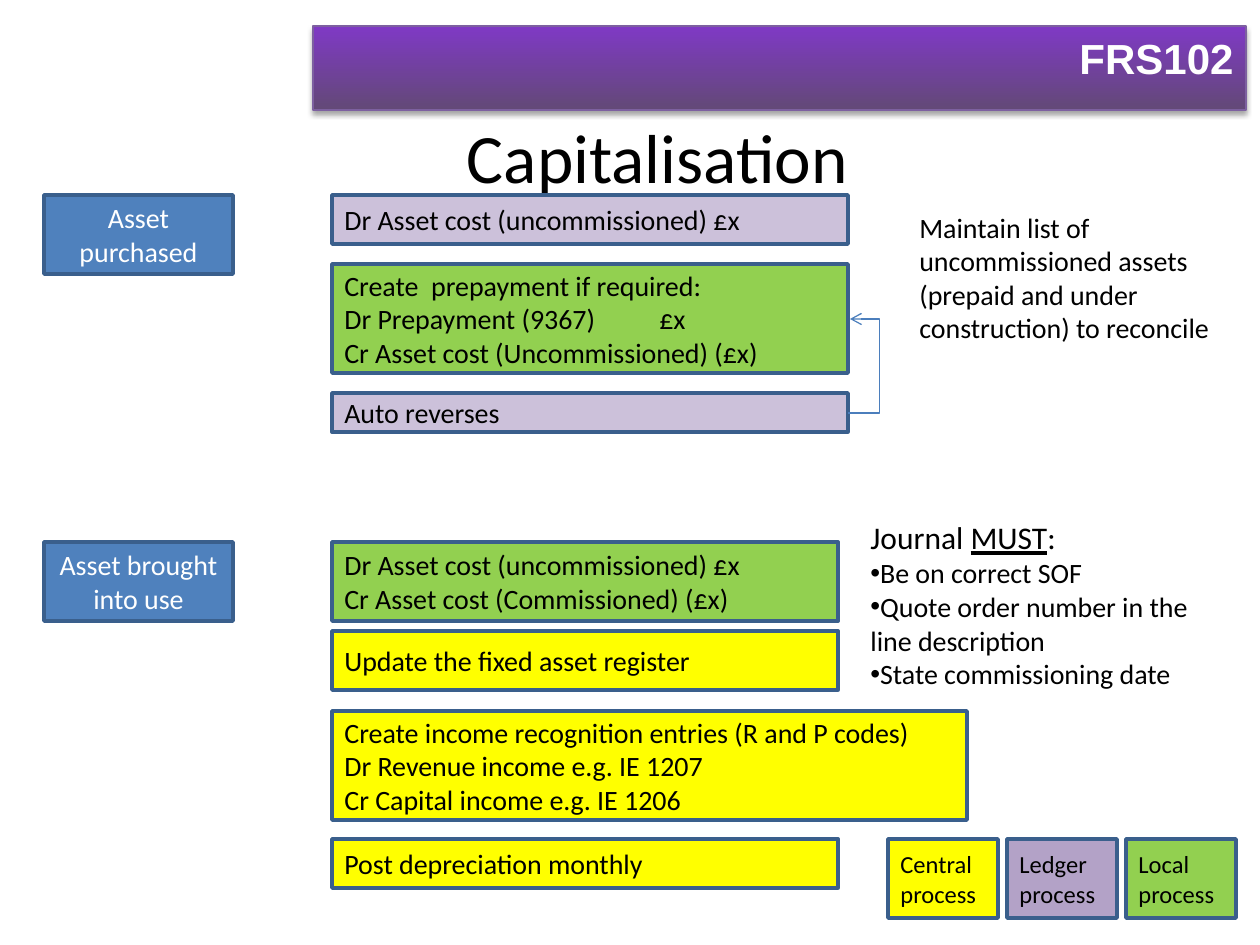
import pptx
import pptx.dml.color
import pptx.enum.shapes
import pptx.enum.text
import pptx.oxml
import pptx.oxml.ns
import pptx.util
from lxml import etree

RGB = pptx.dml.color.RGBColor
SHAPE = pptx.enum.shapes.MSO_SHAPE
ALIGN = pptx.enum.text.PP_ALIGN
ANCHOR = pptx.enum.text.MSO_ANCHOR

BLACK = RGB(0x00, 0x00, 0x00)
WHITE = RGB(0xFF, 0xFF, 0xFF)
BLUE = RGB(0x4F, 0x81, 0xBD)
OUTLINE = RGB(0x3A, 0x5F, 0x8C)
ARROW = RGB(0x4B, 0x7E, 0xBC)
YELLOW = RGB(0xFF, 0xFF, 0x00)
GREEN = RGB(0x92, 0xD0, 0x50)
LILAC = RGB(0xCC, 0xC1, 0xDA)
MAUVE = RGB(0xB3, 0xA2, 0xC7)
BANNER_TOP = RGB(0x7F, 0x39, 0xC5)
BANNER_BOTTOM = RGB(0x63, 0x49, 0x77)
BANNER_LINE = RGB(0x7D, 0x60, 0xA0)

PX = 914400 / 126  # EMU in one px
STAGE_LEFT, STAGE_WIDTH, STAGE_HEIGHT = 44, 189, 79
STEP_LEFT = 332
PURCHASE_WIDTH, USE_WIDTH, INCOME_WIDTH = 516, 506, 635
LEGEND_LEFT, LEGEND_TOP, LEGEND_STEP = 888, 839, 119
LEGEND_WIDTH, LEGEND_HEIGHT = 110, 79

# text, top
STAGES = [("Asset purchased", 195), ("Asset brought into use", 542)]

# lines, top, width, height, fill
STEPS = [
    (["Dr Asset cost (uncommissioned) £x"], 195, PURCHASE_WIDTH, 49, LILAC),
    (["Create  prepayment if required:",
      "Dr Prepayment (9367)\t\t£x",
      "Cr Asset cost (Uncommissioned) (£x)"], 264, PURCHASE_WIDTH, 109, GREEN),
    (["Auto reverses"], 393, PURCHASE_WIDTH, 39, LILAC),
    (["Dr Asset cost (uncommissioned) £x",
      "Cr Asset cost (Commissioned) (£x)"], 542, USE_WIDTH, 79, GREEN),
    (["Update the fixed asset register"], 631, USE_WIDTH, 59, YELLOW),
    (["Create income recognition entries (R and P codes)",
      "Dr Revenue income e.g. IE 1207",
      "Cr Capital income e.g. IE 1206"], 711, INCOME_WIDTH, 109, YELLOW),
    (["Post depreciation monthly"], 839, USE_WIDTH, 49, YELLOW),
]

LEGEND = [("Central process", YELLOW), ("Ledger process", MAUVE), ("Local process", GREEN)]

RECONCILE_NOTE = ("Maintain list of uncommissioned assets "
                  "(prepaid and under construction) to reconcile")
JOURNAL_HEADING = [("Journal ", False), ("MUST", True), (":", False)]
JOURNAL_RULES = ["Be on correct SOF",
                 "Quote order number in the line description",
                 "State commissioning date"]


def emu(*lengths):
    return [pptx.util.Emu(round(length * PX)) for length in lengths]


def add_text(frame, content, *, size=16, color=BLACK, font="Calibri", bold=None,
             align=ALIGN.LEFT, anchor=ANCHOR.TOP, bullet=None):
    """Append one paragraph; content is a string or a list of (text, underlined) runs."""
    frame.word_wrap = True
    frame.vertical_anchor = anchor
    started = bool(frame.paragraphs[0].runs)
    paragraph = frame.add_paragraph() if started else frame.paragraphs[0]
    paragraph.alignment = align
    if bullet:
        properties = paragraph._p.get_or_add_pPr()
        bullet_font = etree.SubElement(properties, pptx.oxml.ns.qn("a:buFont"))
        bullet_font.set("typeface", "Arial")
        etree.SubElement(properties, pptx.oxml.ns.qn("a:buChar")).set("char", bullet)
    for text, underlined in [(content, False)] if isinstance(content, str) else content:
        run = paragraph.add_run()
        run.text = text
        run.font.size = pptx.util.Pt(size)
        run.font.name = font
        run.font.bold = bold
        run.font.underline = underlined or None
        run.font.color.rgb = color


def add_process(slide, lines, left, top, width, height, fill, **text_format):
    box = slide.shapes.add_shape(SHAPE.FLOWCHART_PROCESS, *emu(left, top, width, height))
    box.shadow.inherit = False
    box.fill.solid()
    box.fill.fore_color.rgb = fill
    box.line.color.rgb = OUTLINE
    box.line.width = pptx.util.Pt(2)
    for line in lines:
        add_text(box.text_frame, line, anchor=ANCHOR.MIDDLE, **text_format)


def add_text_box(slide, left, top, width, height):
    return slide.shapes.add_textbox(*emu(left, top, width, height)).text_frame


def add_banner(slide):
    banner = slide.shapes.add_shape(SHAPE.RECTANGLE, *emu(313, 26, 933, 84))
    banner.fill.gradient()
    banner.fill.gradient_angle = 90
    for stop, color in zip(banner.fill.gradient_stops, (BANNER_BOTTOM, BANNER_TOP)):
        stop.color.rgb = color
    for stop, position in zip(banner.fill.gradient_stops, (0, 1)):
        stop.position = position
    banner.line.color.rgb = BANNER_LINE
    banner.line.width = pptx.util.Pt(0.75)
    banner.shadow.inherit = False
    effects = banner._element.spPr.find(pptx.oxml.ns.qn("a:effectLst"))
    effects.append(pptx.oxml.parse_xml(
        f'<a:outerShdw {pptx.oxml.ns.nsdecls("a")} blurRad="39370" dist="22860" '
        'dir="5400000" rotWithShape="0"><a:srgbClr val="000000">'
        '<a:alpha val="35000"/></a:srgbClr></a:outerShdw>'))
    add_text(banner.text_frame, "FRS102", size=24, color=WHITE, font="Arial",
             bold=True, align=ALIGN.RIGHT)


def add_reversal_arrow(slide):
    """Loop from the reversal back to the prepayment, bending out to the right."""
    start_x, end_x, bend_x = STEP_LEFT + PURCHASE_WIDTH, STEP_LEFT + PURCHASE_WIDTH + 2, 880
    arrow = slide.shapes.add_connector(
        pptx.enum.shapes.MSO_CONNECTOR.ELBOW, *emu(start_x, 413, end_x, 319))
    arrow.line.color.rgb = ARROW
    arrow.line.width = pptx.util.Pt(0.75)
    properties = arrow._element.spPr
    adjustments = properties.find(pptx.oxml.ns.qn("a:prstGeom")).get_or_add_avLst()
    guide = etree.SubElement(adjustments, pptx.oxml.ns.qn("a:gd"))
    guide.set("name", "adj1")
    guide.set("fmla", f"val {100000 * (bend_x - start_x) // (end_x - start_x)}")
    line = arrow.line._get_or_add_ln()
    etree.SubElement(line, pptx.oxml.ns.qn("a:tailEnd")).set("type", "arrow")
    etree.SubElement(properties, pptx.oxml.ns.qn("a:effectLst"))


def main():
    deck = pptx.Presentation()
    deck.slide_width, deck.slide_height = emu(1260, 945)
    slide = deck.slides.add_slide(deck.slide_layouts[6])

    add_banner(slide)
    add_text(add_text_box(slide, 372, 116, 571, 79), "Capitalisation", size=39.6,
             align=ALIGN.CENTER, anchor=ANCHOR.MIDDLE)
    for stage, top in STAGES:
        add_process(slide, [stage], STAGE_LEFT, top, STAGE_WIDTH, STAGE_HEIGHT, BLUE,
                    color=WHITE, align=ALIGN.CENTER)
    for lines, top, width, height, fill in STEPS:
        add_process(slide, lines, STEP_LEFT, top, width, height, fill)
    add_reversal_arrow(slide)

    add_text(add_text_box(slide, 907, 204, 353, 149), RECONCILE_NOTE)
    journal = add_text_box(slide, 858, 512, 387, 190)
    add_text(journal, JOURNAL_HEADING, size=18)
    for rule in JOURNAL_RULES:
        add_text(journal, rule, bullet="•")

    for column, (label, fill) in enumerate(LEGEND):
        add_process(slide, [label], LEGEND_LEFT + column * LEGEND_STEP, LEGEND_TOP,
                    LEGEND_WIDTH, LEGEND_HEIGHT, fill, size=14)

    deck.save("out.pptx")


if __name__ == "__main__":
    main()
